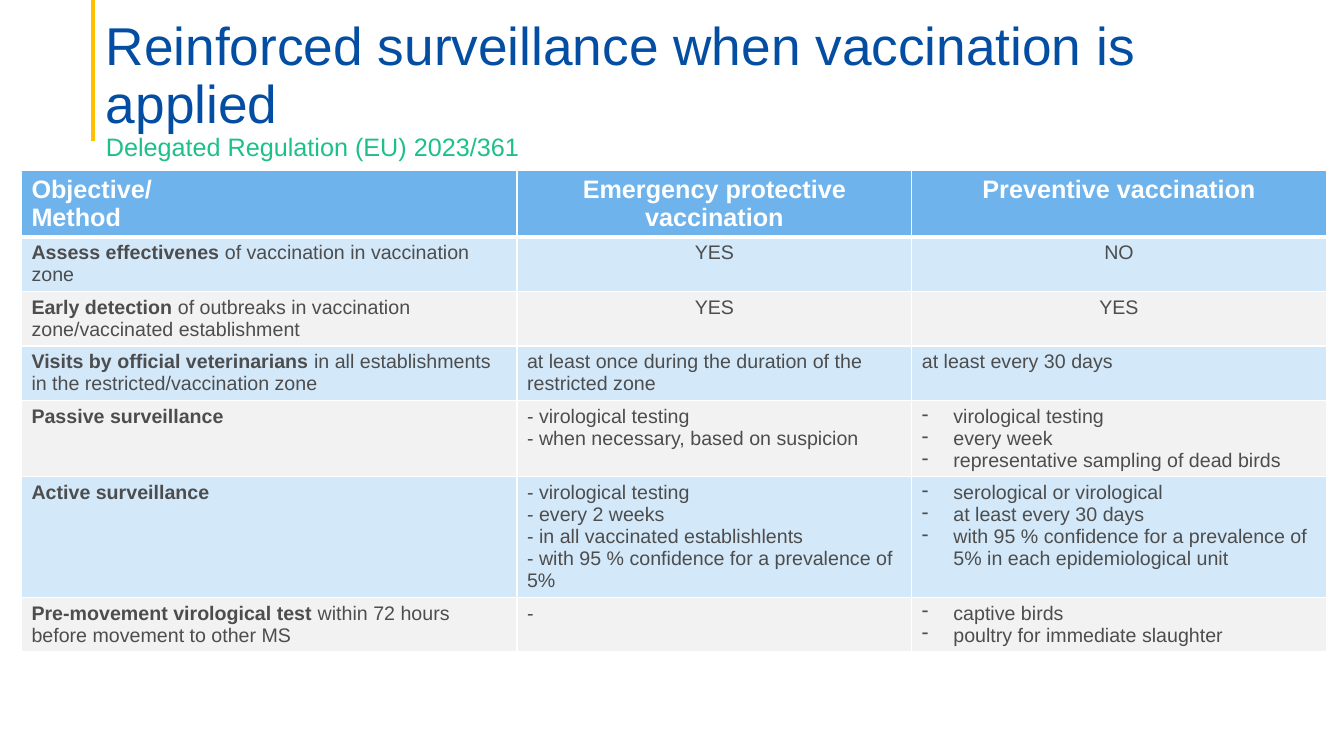
import pptx
import pptx.dml.color
import pptx.enum.shapes
import pptx.enum.text
import pptx.oxml
import pptx.oxml.ns
import pptx.util
from lxml import etree

Pt = pptx.util.Pt
ALIGN = pptx.enum.text.PP_ALIGN
FONT = "Arial"
WHITE, GREY, BLUE, GREEN, GOLD = "FFFFFF", "4D4D4D", "034EA2", "1EC08A", "FFC000"
HEADER_FILL, BAND_FILLS = "6EB3EB", ("D3E8F9", "F2F2F2")
COLUMN_WIDTHS = (354, 282, 296)
ROW_HEIGHTS = (47, 39, 39, 39, 54, 86, 39)
BULLET_INDENT = 22.5

HEADERS = (["Objective/", "Method"], ["Emergency protective vaccination"], ["Preventive vaccination"])
# Bold label, rest of the label, emergency vaccination, preventive vaccination
ROWS = (
    ("Assess effectivenes ", "of vaccination in vaccination zone", ["YES"], ["NO"]),
    ("Early detection ", "of outbreaks in vaccination zone/vaccinated establishment", ["YES"], ["YES"]),
    ("Visits by official veterinarians ", "in all establishments in the restricted/vaccination zone",
     ["at least once during the duration of the restricted zone"], ["at least every 30 days"]),
    ("Passive surveillance", "",
     ["- virological testing", "- when necessary, based on suspicion"],
     ["virological testing", "every week", "representative sampling of dead birds"]),
    ("Active surveillance", "",
     ["- virological testing", "- every 2 weeks", "- in all vaccinated establishlents",
      "- with 95 % confidence for a prevalence of 5%"],
     ["serological or virological", "at least every 30 days",
      "with 95 % confidence for a prevalence of 5% in each epidemiological unit"]),
    ("Pre-movement virological test ", "within 72 hours before movement to other MS",
     ["-"], ["captive birds", "poultry for immediate slaughter"]),
)


def colour(value):
    return pptx.dml.color.RGBColor.from_string(value)


def set_font(font, size, value, bold=False):
    font.name = FONT
    font.size = Pt(size)
    font.bold = bold
    font.color.rgb = colour(value)


def add_bullet(paragraph):
    properties = paragraph._p.get_or_add_pPr()
    properties.set("marL", str(Pt(BULLET_INDENT)))
    properties.set("indent", str(-Pt(BULLET_INDENT)))
    etree.SubElement(properties, pptx.oxml.ns.qn("a:buFontTx"))
    etree.SubElement(properties, pptx.oxml.ns.qn("a:buChar")).set("char", "-")


def style_cell(cell, fill, bottom_width=1):
    """Fill the cell and give it white borders."""
    properties = cell._tc.get_or_add_tcPr()
    for side, width in (("L", 1), ("R", 1), ("T", 1), ("B", bottom_width)):
        properties.append(pptx.oxml.parse_xml(
            f'<a:ln{side} {pptx.oxml.ns.nsdecls("a")} w="{Pt(width)}">'
            f'<a:solidFill><a:srgbClr val="{WHITE}"/></a:solidFill></a:ln{side}>'))
    cell.fill.solid()
    cell.fill.fore_color.rgb = colour(fill)


def write_lines(cell, lines, size, value, bold=False, alignment=ALIGN.LEFT, bulleted=False):
    for index, line in enumerate(lines):
        paragraph = cell.text_frame.paragraphs[0] if index == 0 else cell.text_frame.add_paragraph()
        paragraph.alignment = alignment
        if bulleted:
            add_bullet(paragraph)
        paragraph.add_run().text = line
        set_font(paragraph.font, size, value, bold)


def write_label(cell, bold_text, plain_text):
    paragraph = cell.text_frame.paragraphs[0]
    for text, bold in ((bold_text, True), (plain_text, False)):
        if text:
            run = paragraph.add_run()
            run.text = text
            set_font(run.font, 14, GREY, bold)


def add_title(slide, left, top, width, height):
    line_x = left - 2
    rule = slide.shapes.add_connector(
        pptx.enum.shapes.MSO_CONNECTOR.STRAIGHT, Pt(line_x), Pt(0), Pt(line_x), Pt(101))
    rule.line.color.rgb = colour(GOLD)
    rule.line.width = Pt(2.25)
    etree.SubElement(rule._element.spPr, pptx.oxml.ns.qn("a:effectLst"))

    title = slide.shapes.title
    title.left, title.top, title.width, title.height = Pt(left), Pt(top), Pt(width), Pt(height)
    frame = title.text_frame
    frame.word_wrap = True
    frame.auto_size = pptx.enum.text.MSO_AUTO_SIZE.NONE
    frame.vertical_anchor = pptx.enum.text.MSO_ANCHOR.BOTTOM
    frame.margin_left = frame.margin_right = Pt(7.2)
    frame.margin_top, frame.margin_bottom = Pt(3.6), Pt(28)
    paragraph = frame.paragraphs[0]
    paragraph.alignment = ALIGN.LEFT
    paragraph.line_spacing = 0.9
    heading = paragraph.add_run()
    heading.text = "Reinforced surveillance when vaccination is applied"
    set_font(heading.font, 38, BLUE)
    paragraph.add_line_break()
    regulation = paragraph.add_run()
    regulation.text = "Delegated Regulation (EU) 2023/361"
    set_font(regulation.font, 18, GREEN)


def add_surveillance_table(slide, left, top):
    table = slide.shapes.add_table(
        len(ROW_HEIGHTS), len(COLUMN_WIDTHS), Pt(left), Pt(top),
        Pt(sum(COLUMN_WIDTHS)), Pt(sum(ROW_HEIGHTS))).table
    for column, width in zip(table.columns, COLUMN_WIDTHS):
        column.width = Pt(width)
    for row, height in zip(table.rows, ROW_HEIGHTS):
        row.height = Pt(height)

    for index, lines in enumerate(HEADERS):
        cell = table.cell(0, index)
        style_cell(cell, HEADER_FILL, bottom_width=3)
        write_lines(cell, lines, 18, WHITE, True, ALIGN.CENTER if index else ALIGN.LEFT)

    for number, (bold_text, plain_text, emergency, preventive) in enumerate(ROWS, start=1):
        for index in range(len(COLUMN_WIDTHS)):
            style_cell(table.cell(number, index), BAND_FILLS[(number - 1) % 2])
        write_label(table.cell(number, 0), bold_text, plain_text)
        alignment = ALIGN.CENTER if emergency == ["YES"] else ALIGN.LEFT
        write_lines(table.cell(number, 1), emergency, 14, GREY, alignment=alignment)
        write_lines(table.cell(number, 2), preventive, 14, GREY, alignment=alignment,
                    bulleted=len(preventive) > 1)


def main():
    presentation = pptx.Presentation()
    presentation.slide_width, presentation.slide_height = Pt(960), Pt(540)
    slide = presentation.slides.add_slide(presentation.slide_layouts[5])
    add_title(slide, 68.4, 38.9, 879, 105)
    add_surveillance_table(slide, 15.3, 121.7)
    presentation.save("out.pptx")


if __name__ == "__main__":
    main()
